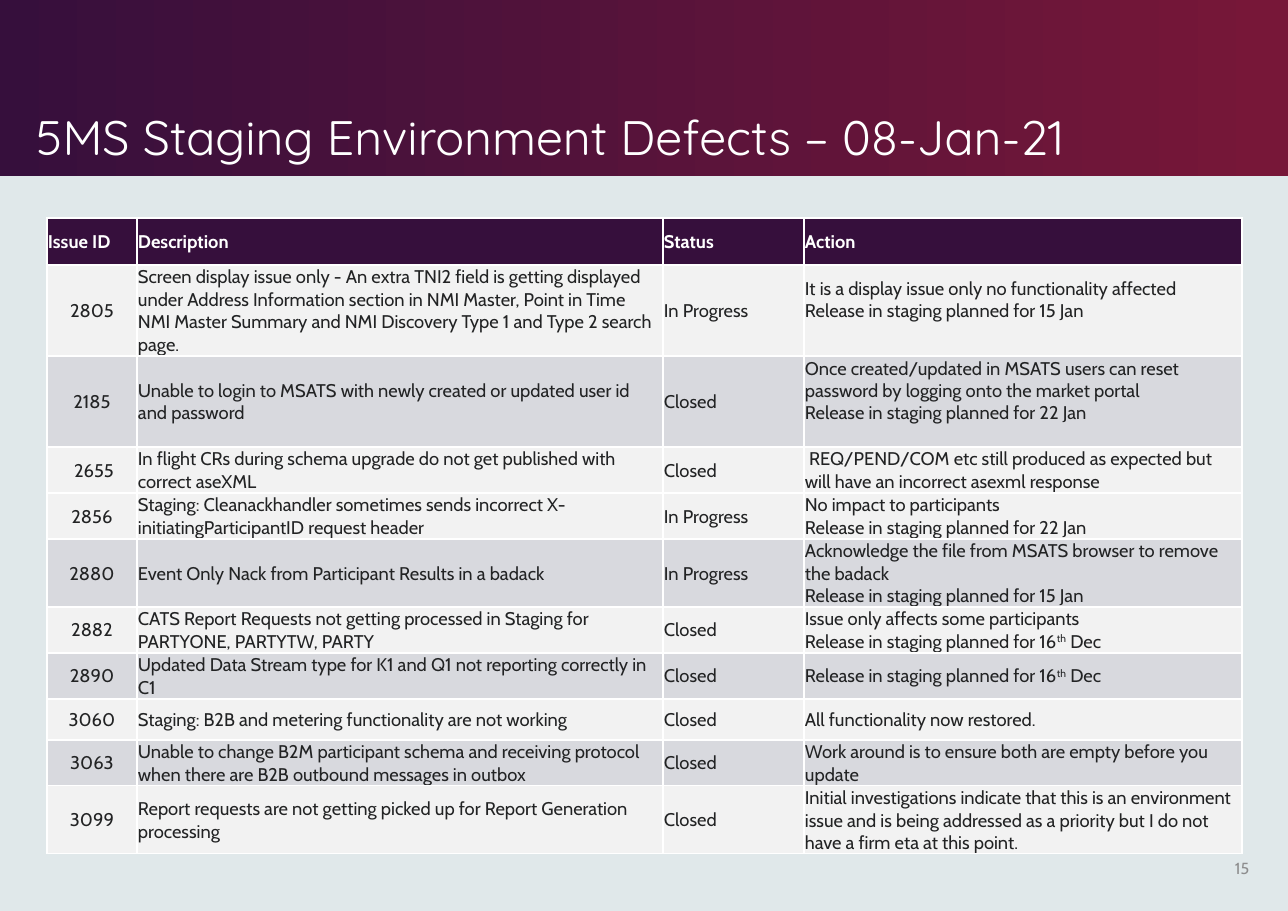
from lxml import etree
from pptx import Presentation
from pptx.dml.color import RGBColor
from pptx.enum.shapes import MSO_SHAPE
from pptx.enum.text import MSO_ANCHOR, MSO_AUTO_SIZE, PP_ALIGN
from pptx.oxml.ns import qn
from pptx.util import Emu, Pt

RECTANGLE = MSO_SHAPE.RECTANGLE
MIDDLE, BOTTOM = MSO_ANCHOR.MIDDLE, MSO_ANCHOR.BOTTOM
NO_AUTOFIT = MSO_AUTO_SIZE.NONE
LEFT, CENTER, RIGHT = PP_ALIGN.LEFT, PP_ALIGN.CENTER, PP_ALIGN.RIGHT

EMU_PER_PX = 8298
SLIDE_WIDTH, SLIDE_HEIGHT = 1288, 911
TITLE_ONLY_LAYOUT = 5

COLOURS = {
    "background": "E0E8EA",
    "plum": "360F3C",
    "crimson": "771738",
    "white": "FFFFFF",
    "text": "222324",
    "page_number": "8D8D8E",
    "light_row": "F2F2F2",
    "shaded_row": "D8D9DE",
}

COLUMN_WIDTHS = [90, 526, 141, 438]
HEADER_HEIGHT = 47
HEADINGS = ["Issue ID", "Description", "Status", "Action"]
ACTION_COLUMN = 3
SHADED_ISSUES = {"2185", "2880", "2890", "3063"}
RAISED_ACTIONS = {"2805", "2185"}

# Row height, then the cells; text between carets is superscript.
DEFECTS = [
    (91, "2805",
     "Screen display issue only - An extra TNI2 field is getting displayed under Address "
     "Information section in NMI Master, Point in Time NMI Master Summary and NMI Discovery "
     "Type 1 and Type 2 search page.",
     "In Progress",
     "It is a display issue only no functionality affected\nRelease in staging planned for 15 Jan"),
    (91, "2185",
     "Unable to login to MSATS with newly created or updated user id and password",
     "Closed",
     "Once created/updated in MSATS users can reset password by logging onto the market portal\n"
     "Release in staging planned for 22 Jan"),
    (46, " 2655",
     "In flight CRs during schema upgrade do not get published with correct aseXML",
     "Closed",
     " REQ/PEND/COM etc still produced as expected but will have an incorrect asexml response"),
    (46, "2856",
     "Staging: Cleanackhandler sometimes sends incorrect X-initiatingParticipantID request header",
     "In Progress",
     "No impact to participants\nRelease in staging planned for 22 Jan"),
    (68, "2880",
     "Event Only Nack from Participant Results in a badack",
     "In Progress",
     "Acknowledge the file from MSATS browser to remove the badack\n"
     "Release in staging planned for 15 Jan"),
    (46, "2882",
     "CATS Report Requests not getting processed in Staging for PARTYONE, PARTYTW, PARTY",
     "Closed",
     "Issue only affects some participants\nRelease in staging planned for 16^th^ Dec"),
    (46, "2890",
     "Updated Data Stream type for K1 and Q1 not reporting correctly in C1",
     "Closed",
     "Release in staging planned for 16^th^ Dec"),
    (41, "3060",
     "Staging: B2B and metering functionality are not working",
     "Closed",
     "All functionality now restored."),
    (46, "3063",
     "Unable to change B2M participant schema and receiving protocol when there are B2B "
     "outbound messages in outbox",
     "Closed",
     "Work around is to ensure both are empty before you update"),
    (68, "3099",
     "Report requests are not getting picked up for Report Generation processing",
     "Closed",
     "Initial investigations indicate that this is an environment issue and is being addressed "
     "as a priority but I do not have a firm eta at this point."),
]


def px(length):
    return Emu(length * EMU_PER_PX)


def colour(name):
    return RGBColor.from_string(COLOURS[name])


def write(text_frame, text, font="Cabin", size=12, color="text", bold=False,
          align=LEFT, line_spacing=1.0):
    """Write one paragraph per line, raising the text between carets."""
    for index, line in enumerate(text.split("\n")):
        paragraph = text_frame.add_paragraph() if index else text_frame.paragraphs[0]
        paragraph.alignment = align
        paragraph.line_spacing = line_spacing
        for part_index, part in enumerate(line.split("^")):
            run = paragraph.add_run()
            run.text = part
            run.font.name = font
            run.font.size = Pt(size)
            run.font.bold = bold
            run.font.color.rgb = colour(color)
            if part_index % 2:
                run.font._element.set("baseline", "30000")


def add_title_band(slide):
    band = slide.shapes.add_shape(RECTANGLE, 0, 0, px(SLIDE_WIDTH), px(176))
    band.shadow.inherit = False
    band.line.fill.background()
    band.fill.gradient()
    band.fill.gradient_angle = 0
    for stop, name, position in zip(band.fill.gradient_stops, ("plum", "crimson"), (0, 0.99)):
        stop.color.rgb = colour(name)
        stop.position = position
    slide.shapes._spTree.insert(2, band._element)  # behind the title


def fill_title(slide, text):
    title = slide.shapes.title
    title.left, title.top, title.width, title.height = px(26), px(45), px(1196), px(126)
    frame = title.text_frame
    frame.auto_size = NO_AUTOFIT
    frame.word_wrap = True
    frame.vertical_anchor = BOTTOM
    frame.margin_left = frame.margin_right = px(10)
    frame.margin_top = frame.margin_bottom = px(5)
    write(frame, text, font="Quicksand", size=31.6, color="white", line_spacing=0.9)


def add_page_number(slide, number):
    box = slide.shapes.add_textbox(px(1200), px(844), px(60), px(48))
    box.text_frame.word_wrap = True
    box.text_frame.vertical_anchor = MIDDLE
    write(box.text_frame, number, size=10.5, color="page_number", align=RIGHT)


def add_cell_borders(cell):
    properties = cell._tc.get_or_add_tcPr()
    for side in ("lnL", "lnR", "lnT", "lnB"):
        line = etree.SubElement(properties, qn(f"a:{side}"), w=str(Pt(1)))
        fill = etree.SubElement(line, qn("a:solidFill"))
        etree.SubElement(fill, qn("a:srgbClr"), val=COLOURS["white"])


def fill_cell(cell, text, fill, bottom_margin=0, **text_format):
    add_cell_borders(cell)
    cell.fill.solid()
    cell.fill.fore_color.rgb = colour(fill)
    cell.vertical_anchor = MIDDLE
    cell.margin_left = cell.margin_right = cell.margin_top = px(1)
    cell.margin_bottom = px(bottom_margin)
    write(cell.text_frame, text, **text_format)


def add_defect_table(slide):
    heights = [HEADER_HEIGHT] + [defect[0] for defect in DEFECTS]
    table = slide.shapes.add_table(len(heights), len(COLUMN_WIDTHS), px(47), px(218),
                                   px(sum(COLUMN_WIDTHS)), px(sum(heights))).table
    table.first_row = table.horz_banding = False
    for column, width in zip(table.columns, COLUMN_WIDTHS):
        column.width = px(width)
    for row, height in zip(table.rows, heights):
        row.height = px(height)

    for column, heading in enumerate(HEADINGS):
        fill_cell(table.cell(0, column), heading, "plum", color="white", bold=True)
    for row, (_, *texts) in enumerate(DEFECTS, start=1):
        issue = texts[0]
        fill = "shaded_row" if issue in SHADED_ISSUES else "light_row"
        for column, text in enumerate(texts):
            raised = column == ACTION_COLUMN and issue in RAISED_ACTIONS
            fill_cell(table.cell(row, column), text, fill,
                      bottom_margin=22 if raised else 0,
                      align=LEFT if column else CENTER)


def main():
    presentation = Presentation()
    presentation.slide_width, presentation.slide_height = px(SLIDE_WIDTH), px(SLIDE_HEIGHT)
    slide = presentation.slides.add_slide(presentation.slide_layouts[TITLE_ONLY_LAYOUT])
    slide.background.fill.solid()
    slide.background.fill.fore_color.rgb = colour("background")
    add_title_band(slide)
    fill_title(slide, "5MS Staging Environment Defects – 08-Jan-21")
    add_page_number(slide, "15")
    add_defect_table(slide)
    presentation.save("out.pptx")


if __name__ == "__main__":
    main()
